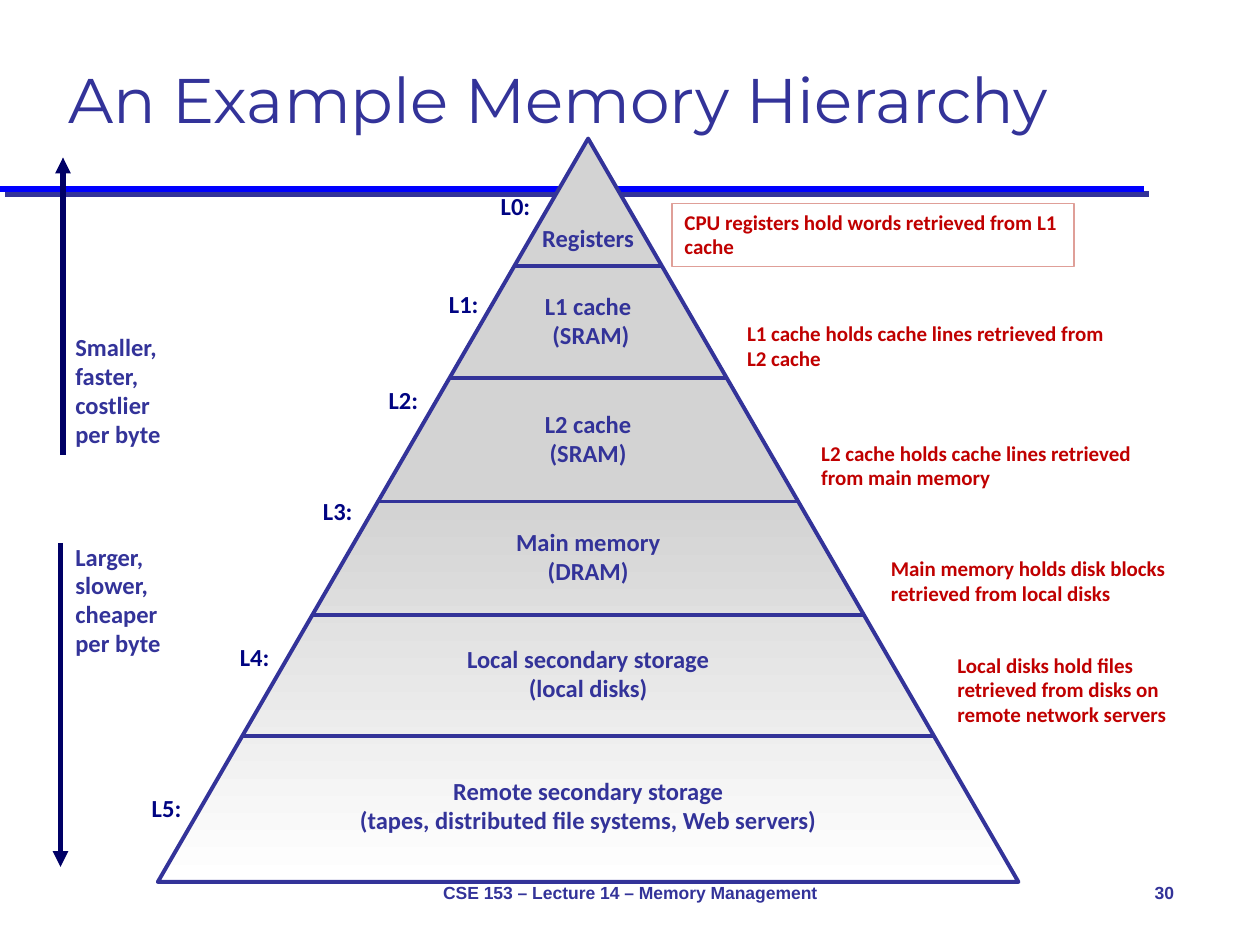
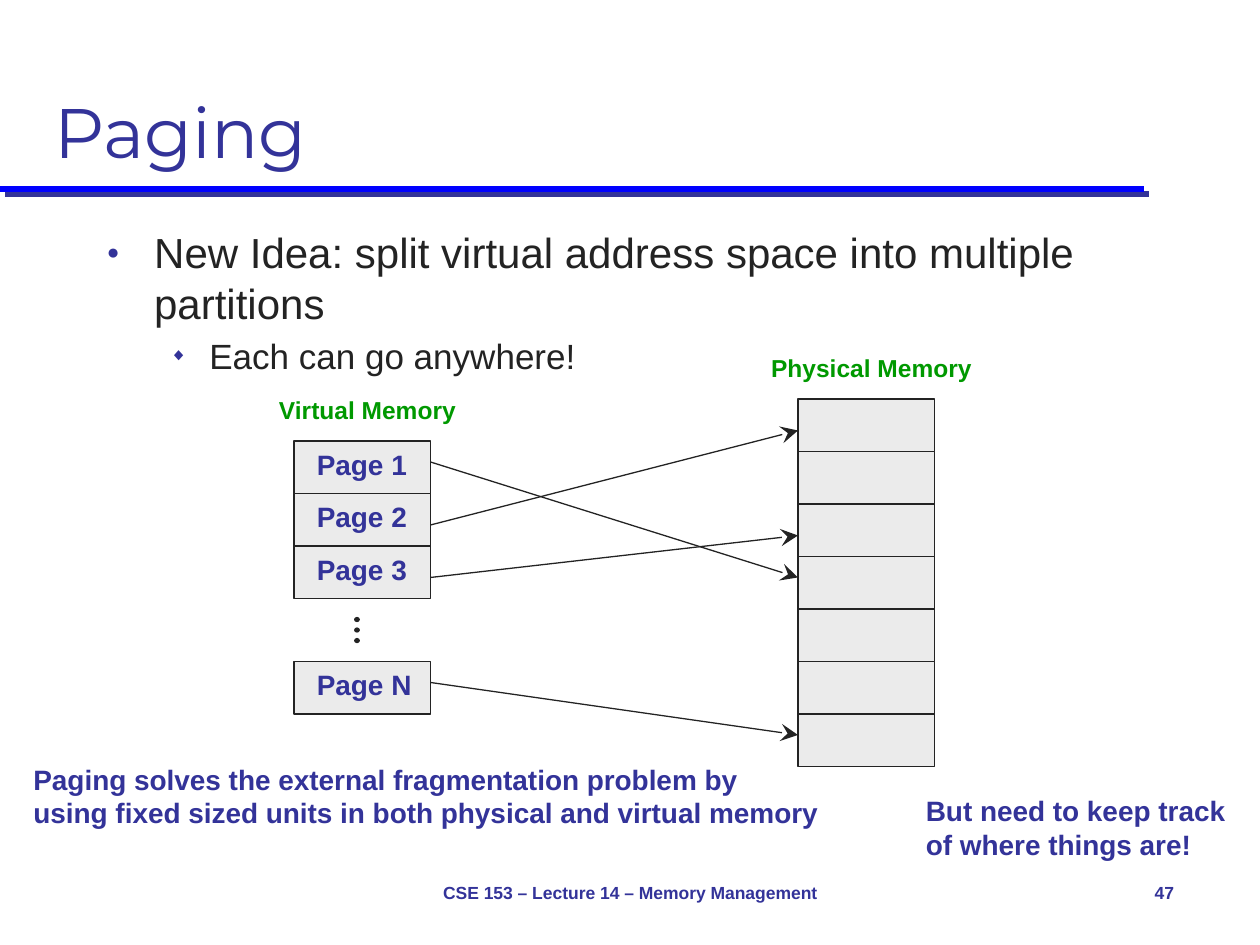
from copy import deepcopy

from lxml.etree import SubElement
from pptx import Presentation
from pptx.dml.color import RGBColor
from pptx.enum.dml import MSO_LINE
from pptx.enum.shapes import MSO_CONNECTOR, MSO_SHAPE
from pptx.enum.text import MSO_ANCHOR, PP_ALIGN
from pptx.oxml.ns import qn
from pptx.util import Pt

COLORS = {
    "ink": "333399", "rule": "0000FF", "arrow": "000066", "level": "000482",
    "note": "C00000", "note_frame": "DF9F98", "stone": "D3D3D3", "white": "FFFFFF",
    "text": "232323", "cell": "EBEBEB", "heading": "009900",
}
FOOTER = "CSE 153 – Lecture 14 – Memory Management"

PYRAMID = {"left": 90.2, "top": 79.2, "width": 491.8, "height": 424.8}
DIVIDERS = [152, 216, 286.6, 351.4, 420.5]
TIERS = [
    (["Registers"], 136.5, 80),
    (["L1 cache", " (SRAM)"], 183.6, 80),
    (["L2 cache", "(SRAM)"], 251, 80),
    (["Main memory", "(DRAM)"], 318.4, 110),
    (["Local secondary storage", "(local disks)"], 385.4, 170),
    (["Remote secondary storage", "(tapes, distributed file systems, Web servers)"], 460.8, 290),
]
LEVEL_W, LEVEL_H = 44, 24.5
LEVELS = [(294.6, 105.8), (265, 162), (230.5, 216.7), (193, 280), (145.5, 363.6), (95.2, 450)]
NOTES = [
    ("CPU registers hold words retrieved from L1 cache", 384, 116.4, 229.7, 36),
    ("L1 cache holds cache lines retrieved from L2 cache", 419.8, 180, 223.2, 36),
    ("L2 cache holds cache lines retrieved from main memory", 462.2, 248.4, 207.4, 36),
    ("Main memory holds disk blocks retrieved from local disks", 502, 314.4, 216, 36),
    ("Local disks hold files retrieved from disks on remote network servers", 540, 369.4, 162.7, 50.4),
]
TRENDS = [
    (["Smaller,", "faster,", "costlier", "per byte"], 186.7, (36, 260, 36, 90)),
    (["Larger,", "slower,", "cheaper", "per byte"], 306.2, (34.6, 310.3, 34.6, 495.4)),
]

BULLETS = [
    ("New Idea: split virtual address space into multiple partitions", 24, "●", 27, 27, 0),
    ("Each can go anywhere!", 20, "◆", 58.5, 22.5, 4),
]
CELL_W, CELL_H = 78, 30
VIRTUAL_X, VIRTUAL_TOP = 168, 252
PHYSICAL_X, PHYSICAL_TOP, FRAMES = 456, 228, 7
PAGES = [("Page 1", 0), ("Page 2", 1), ("Page 3", 2), ("Page N", 4.2)]
MEMORY_HEADINGS = [("Virtual Memory", 144, 222), ("Physical Memory", 432, 198)]
MAPPINGS = [(264, 330), (300, 246), (330, 306), (390, 420)]
REMARKS = [
    (["Paging solves the external fragmentation problem by",
      "using fixed sized units in both physical and virtual memory"], 12, 432, 475),
    (["But need to keep track", "of where things are!"], 522, 450, 196),
]


def rgb(name):
    return RGBColor.from_string(COLORS[name])


def add_run(p, text, size, color, font, bold):
    r = p.add_run()
    r.text = text
    r.font.size, r.font.name, r.font.bold = Pt(size), font, bold
    r.font.color.rgb = rgb(color)


def add_text(slide, lines, x, y, w, h, size, color="ink", font="Arial", bold=True,
             align=PP_ALIGN.LEFT, anchor=MSO_ANCHOR.TOP, wrap=True, spacing=None):
    s = slide.shapes.add_textbox(Pt(x), Pt(y), Pt(w), Pt(h))
    tf = s.text_frame
    tf.word_wrap, tf.vertical_anchor = wrap, anchor
    for i, line in enumerate(lines):
        p = tf.add_paragraph() if i else tf.paragraphs[0]
        p.alignment, p.line_spacing = align, spacing
        add_run(p, line, size, color, font, bold)
    return s


def add_label(slide, lines, x, y, w, h, size=14, color="ink", **options):
    return add_text(slide, lines, x, y, w, h, size, color, "Calibri",
                    anchor=MSO_ANCHOR.MIDDLE, spacing=0.98, **options)


def add_line(slide, x1, y1, x2, y2, color, width, head=None, head_size="med"):
    s = slide.shapes.add_connector(MSO_CONNECTOR.STRAIGHT, Pt(x1), Pt(y1), Pt(x2), Pt(y2))
    s.line.color.rgb, s.line.width = rgb(color), Pt(width)
    SubElement(s._element.spPr, qn("a:effectLst"))
    if head:
        SubElement(s.line._get_or_add_ln(), qn("a:tailEnd"), type=head, w=head_size, len=head_size)
    return s


def add_preset(slide, kind, x, y, w, h, line, width):
    s = slide.shapes.add_shape(kind, Pt(x), Pt(y), Pt(w), Pt(h))
    s.shadow.inherit = False
    s.line.color.rgb, s.line.width = rgb(line), Pt(width)
    return s


def add_cell(slide, x, y):
    s = add_preset(slide, MSO_SHAPE.RECTANGLE, x, y, CELL_W, CELL_H, "text", 0.75)
    s.fill.solid()
    s.fill.fore_color.rgb = rgb("cell")


def add_bullet(p, text, size, mark, indent, hang, before):
    p.space_before = Pt(before)
    pPr = p._p.get_or_add_pPr()
    pPr.set("marL", str(Pt(indent)))
    pPr.set("indent", str(-Pt(hang)))
    SubElement(SubElement(pPr, qn("a:buClr")), qn("a:srgbClr"), val=COLORS["ink"])
    SubElement(pPr, qn("a:buSzPct"), val="50000")
    SubElement(pPr, qn("a:buFont"), typeface="Arial")
    SubElement(pPr, qn("a:buChar"), char=mark)
    add_run(p, text, size, "text", "Arial", False)


def new_slide(prs, title, number, box, size):
    slide = prs.slides.add_slide(prs.slide_layouts[6])
    rule = add_line(slide, 0, 108, 653.8, 108, "rule", 3.5)
    effects = rule._element.spPr.find(qn("a:effectLst"))
    shadow = SubElement(effects, qn("a:outerShdw"), dist=str(Pt(4.2)), dir="2700000", algn="ctr")
    SubElement(shadow, qn("a:srgbClr"), val=COLORS["ink"])
    add_text(slide, [title], *box, size, font="Montserrat", bold=False, anchor=MSO_ANCHOR.BOTTOM)
    add_text(slide, [FOOTER], 240, 491.8, 240, 36, 10, align=PP_ALIGN.CENTER,
             anchor=MSO_ANCHOR.MIDDLE)
    add_text(slide, [number], 630, 491.8, 48, 36, 10, align=PP_ALIGN.RIGHT,
             anchor=MSO_ANCHOR.MIDDLE)
    return slide


def add_pyramid(slide):
    left, top, width, height = PYRAMID.values()
    center = left + width / 2
    s = add_preset(slide, MSO_SHAPE.ISOSCELES_TRIANGLE, left, top, width, height, "ink", 2.25)
    s.fill.gradient()
    s.fill.gradient_angle = 270
    first, last = s.fill.gradient_stops
    first.position, last.position = 0, 1
    first.color.rgb, last.color.rgb = rgb("stone"), rgb("white")
    stops = s._element.spPr.find(".//" + qn("a:gsLst"))
    middle = deepcopy(stops[0])
    middle.set("pos", "49000")
    stops.insert(1, middle)
    for y in DIVIDERS:
        half = (y - top) / height * width / 2
        add_line(slide, center - half, y, center + half, y, "ink", 2)
    for lines, middle_y, w in TIERS:
        h = 7.2 + 16.8 * len(lines)
        add_label(slide, lines, center - w / 2, middle_y - h / 2, w, h, align=PP_ALIGN.CENTER)


def build_hierarchy(prs):
    slide = new_slide(prs, "An Example Memory Hierarchy", "30", (32, 19.4, 686, 62), 36)
    add_pyramid(slide)
    for i, (center, y) in enumerate(LEVELS):
        add_label(slide, [f"L{i}:"], center - LEVEL_W / 2, y, LEVEL_W, LEVEL_H, color="level",
                  align=PP_ALIGN.CENTER, wrap=False)
    for i, (text, *box) in enumerate(NOTES):
        s = add_label(slide, [text], *box, size=12, color="note")
        if i == 0:
            s.line.color.rgb, s.line.width = rgb("note_frame"), Pt(0.75)
    for lines, y, arrow in TRENDS:
        add_line(slide, *arrow, "arrow", 3, "triangle")
        add_label(slide, lines, 36, y, 72, 74)


def build_paging(prs):
    slide = new_slide(prs, "Paging", "47", (24, 12, 672, 90), 40)
    tf = slide.shapes.add_textbox(Pt(54), Pt(126), Pt(624), Pt(108)).text_frame
    tf.word_wrap = True
    for i, bullet in enumerate(BULLETS):
        add_bullet(tf.add_paragraph() if i else tf.paragraphs[0], *bullet)
    for text, x, y in MEMORY_HEADINGS:
        add_text(slide, [text], x, y, 132, 24, 14, "heading", align=PP_ALIGN.CENTER)
    for name, row in PAGES:
        y = VIRTUAL_TOP + row * CELL_H
        add_cell(slide, VIRTUAL_X, y)
        add_text(slide, [name], VIRTUAL_X + 6, y, CELL_W, CELL_H, 16)
    for row in range(FRAMES):
        add_cell(slide, PHYSICAL_X, PHYSICAL_TOP + row * CELL_H)
    dots = add_line(slide, 204, 354, 204, 372, "text", 3)
    dots.line.dash_style = MSO_LINE.ROUND_DOT
    dots.line._get_or_add_ln().set("cap", "rnd")
    for start, end in MAPPINGS:
        add_line(slide, VIRTUAL_X + CELL_W, start, PHYSICAL_X, end, "text", 0.75, "stealth", "lg")
    for lines, x, y, w in REMARKS:
        add_text(slide, lines, x, y, w, 46, 16)


def main():
    prs = Presentation()
    prs.slide_width, prs.slide_height = Pt(720), Pt(540)
    build_hierarchy(prs)
    build_paging(prs)
    prs.save("out.pptx")


if __name__ == "__main__":
    main()
